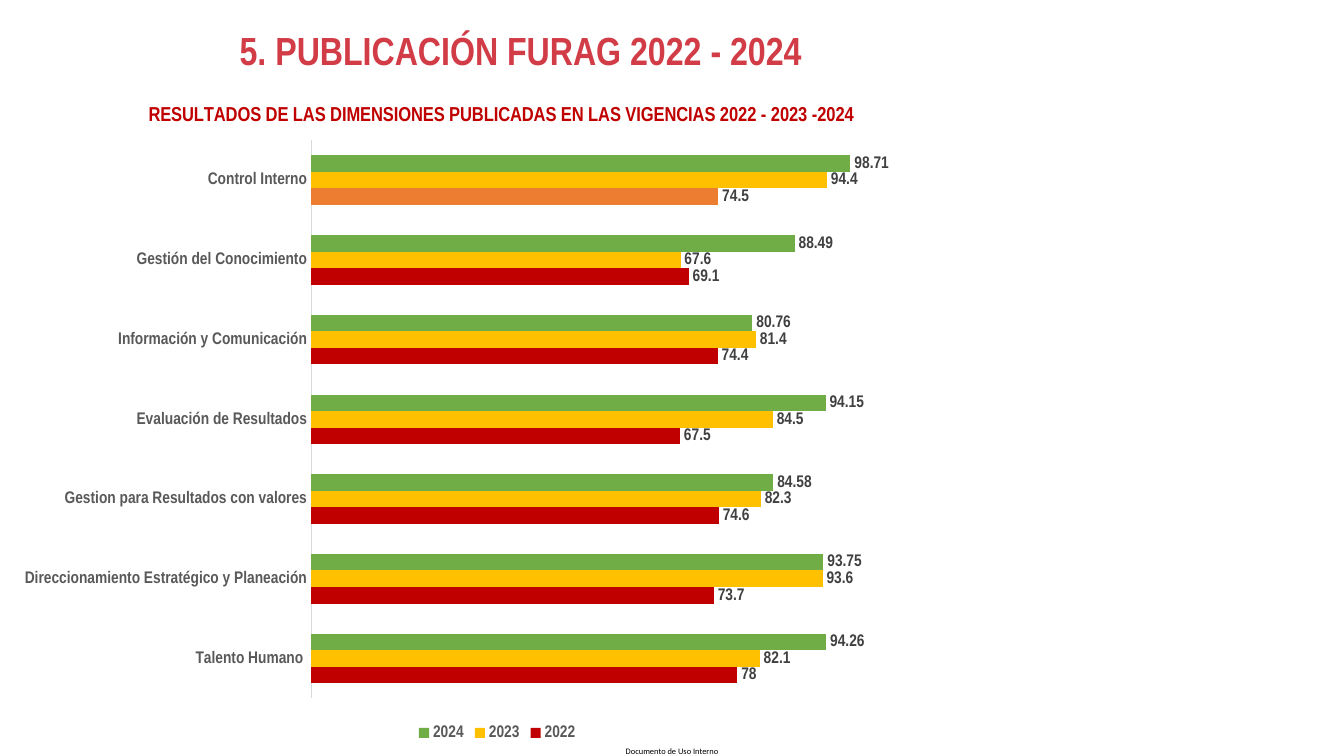
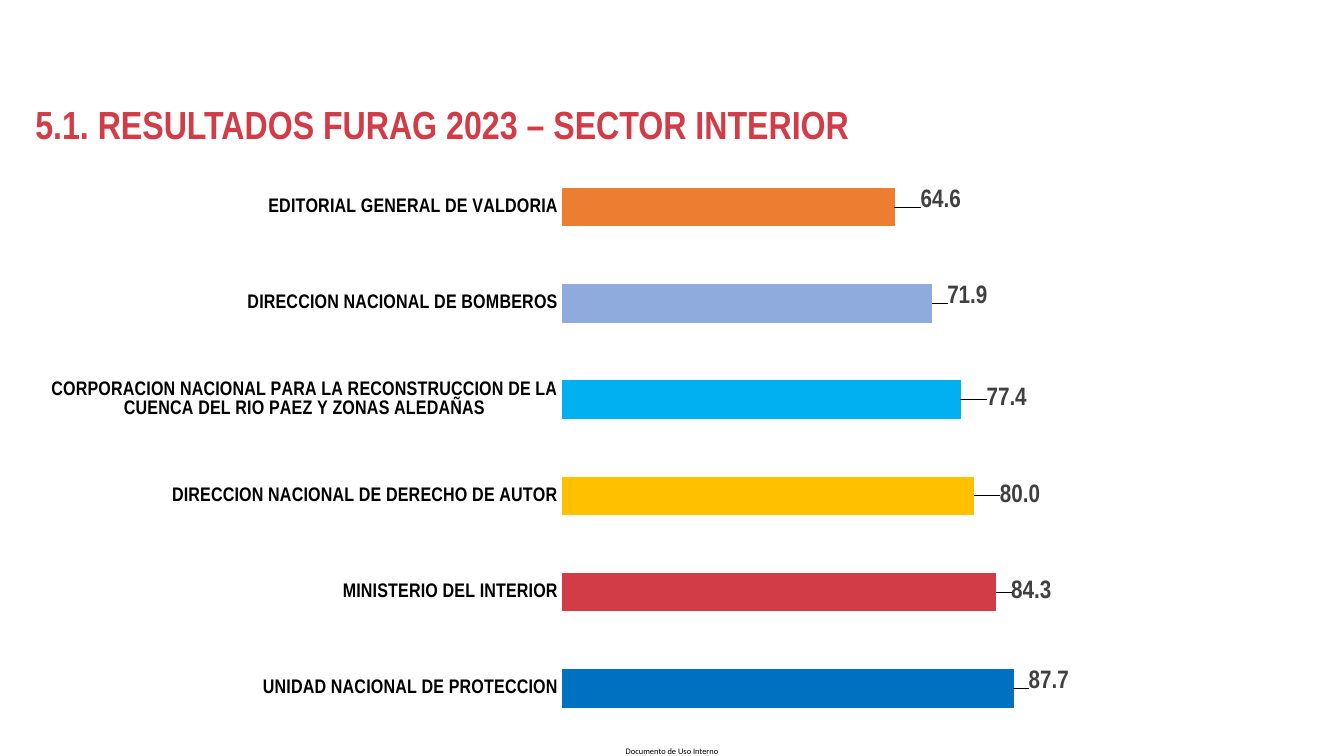
from lxml.etree import SubElement
from pptx import Presentation
from pptx.chart.data import CategoryChartData
from pptx.dml.color import RGBColor
from pptx.enum.chart import XL_CHART_TYPE, XL_LABEL_POSITION, XL_LEGEND_POSITION, XL_TICK_MARK
from pptx.enum.text import MSO_ANCHOR, MSO_AUTO_SIZE, PP_ALIGN
from pptx.oxml.ns import qn
from pptx.util import Cm, Pt

COLORS = {
    "title": "D13C47",
    "dark_red": "C00000",
    "amber": "FFC000",
    "green": "70AD47",
    "orange": "ED7D31",
    "blue": "0070C0",
    "sky": "00B0F0",
    "periwinkle": "8FAADC",
    "black": "000000",
    "axis_text": "595959",
    "label_text": "404040",
    "axis_line": "D9D9D9",
}
FONT = "Arial Narrow"


def set_font(font, size, color, name=FONT, bold=True):
    font.size = Pt(size)
    font.name = name
    font.bold = bold
    font.color.rgb = RGBColor.from_string(COLORS[color])


def set_layout(parent, index, **settings):
    for old_layout in parent.findall(qn("c:layout")):
        parent.remove(old_layout)
    layout = SubElement(parent, qn("c:layout"))
    manual = SubElement(layout, qn("c:manualLayout"))
    for tag, value in settings.items():
        SubElement(manual, qn(f"c:{tag}")).set("val", str(value))
    parent.insert(index, layout)


presentation = Presentation()
presentation.slide_width = Cm(33.87)
presentation.slide_height = Cm(19.05)

dimensions = CategoryChartData()
dimensions.categories = [
    "Talento Humano ",
    "Direccionamiento Estratégico y Planeación",
    "Gestion para Resultados con valores",
    "Evaluación de Resultados",
    "Información y Comunicación",
    "Gestión del Conocimiento",
    "Control Interno",
]
dimensions.add_series("2022", [78, 73.7, 74.6, 67.5, 74.4, 69.1, 74.5])
dimensions.add_series("2023", [82.1, 93.6, 82.3, 84.5, 81.4, 67.6, 94.4])
dimensions.add_series("2024", [94.26, 93.75, 84.58, 94.15, 80.76, 88.49, 98.71])

entities = CategoryChartData(number_format="0.0")
entities.categories = [
    "UNIDAD NACIONAL DE PROTECCION",
    "MINISTERIO DEL INTERIOR",
    "DIRECCION NACIONAL DE DERECHO DE AUTOR",
    "CORPORACION NACIONAL PARA LA RECONSTRUCCION DE LA CUENCA DEL RIO PAEZ Y ZONAS ALEDAÑAS",
    "DIRECCION NACIONAL DE BOMBEROS",
    "EDITORIAL GENERAL DE VALDORIA",
]
entities.add_series("Series 1", [87.7, 84.3, 80, 77.4, 71.9, 64.6])

pages = [
    {
        "title": "5. PUBLICACIÓN FURAG 2022 - 2024",
        "title_at": (5.79, 0.3),
        "data": dimensions,
        "chart_box": (0.2, 2.03, 24.66, 16.74),
        "plot": {"x": 0.31, "y": 0.09, "w": 0.67, "h": 0.84},
        "gap": 182,
        "maximum": 120,
        "category_font": (12, "axis_text"),
        "label_size": 12,
        "series_colors": ["dark_red", "amber", "green"],
    },
    {
        "title": "5.1. RESULTADOS FURAG 2023 – SECTOR INTERIOR",
        "title_at": (0.64, 2.16),
        "data": entities,
        "chart_box": (0.64, 3.38, 27.61, 15.65),
        "plot": {"x": 0.49, "y": 0.04, "w": 0.47, "h": 0.93},
        "gap": 150,
        "maximum": 100,
        "category_font": (14, "black"),
        "label_size": 18,
        "series_colors": ["orange"],
    },
]

charts = []
for page in pages:
    slide = presentation.slides.add_slide(presentation.slide_layouts[6])

    footer = slide.shapes.add_textbox(Cm(15.77), Cm(18.8), Cm(2.39), Cm(0.25))
    frame = footer.text_frame
    frame.margin_left = frame.margin_right = frame.margin_top = frame.margin_bottom = 0
    frame.auto_size = MSO_AUTO_SIZE.SHAPE_TO_FIT_TEXT
    frame.text = "Documento de Uso Interno"
    set_font(frame.paragraphs[0].runs[0].font, 6, "black", "Calibri", False)

    chart_box = [Cm(length) for length in page["chart_box"]]
    chart = slide.shapes.add_chart(XL_CHART_TYPE.BAR_CLUSTERED, *chart_box, page["data"]).chart
    set_font(chart.font, 12, "black")
    chart.has_title = False
    chart.has_legend = False

    category_axis = chart.category_axis
    category_axis.major_tick_mark = XL_TICK_MARK.NONE
    category_axis.has_major_gridlines = False
    set_font(category_axis.tick_labels.font, *page["category_font"])

    value_axis = chart.value_axis
    value_axis.minimum_scale = 0
    value_axis.maximum_scale = page["maximum"]
    value_axis.has_major_gridlines = False
    value_axis.visible = False

    plot = chart.plots[0]
    plot.gap_width = page["gap"]
    plot.vary_by_categories = False
    for series, color in zip(plot.series, page["series_colors"]):
        series.format.fill.solid()
        series.format.fill.fore_color.rgb = RGBColor.from_string(COLORS[color])
        labels = series.data_labels
        labels.show_value = True
        labels.position = XL_LABEL_POSITION.OUTSIDE_END
        set_font(labels.font, page["label_size"], "label_text")

    plot_area = chart._chartSpace.xpath("c:chart/c:plotArea")[0]
    set_layout(plot_area, 0, layoutTarget="inner", xMode="edge", yMode="edge", **page["plot"])
    charts.append(chart)

    left, top = page["title_at"]
    title = slide.shapes.add_textbox(Cm(left), Cm(top), Cm(23.11), Cm(1.7))
    frame = title.text_frame
    frame.word_wrap = True
    frame.vertical_anchor = MSO_ANCHOR.BOTTOM
    frame.text = page["title"]
    paragraph = frame.paragraphs[0]
    paragraph.alignment = PP_ALIGN.JUSTIFY
    paragraph.line_spacing = 0.9
    set_font(paragraph.runs[0].font, 28, "title")

dimension_chart, entity_chart = charts

dimension_chart.has_title = True
chart_title = dimension_chart.chart_title
chart_title.include_in_layout = False
chart_title.text_frame.text = "RESULTADOS DE LAS DIMENSIONES PUBLICADAS EN LAS VIGENCIAS 2022 - 2023 -2024"
set_font(chart_title.text_frame.paragraphs[0].runs[0].font, 14.4, "dark_red")
set_layout(chart_title._element, 1, xMode="edge", yMode="edge", x=0.14, y=0.03)

dimension_chart.has_legend = True
legend = dimension_chart.legend
legend.position = XL_LEGEND_POSITION.BOTTOM
legend.include_in_layout = False
set_font(legend.font, 12, "axis_text")

axis_line = dimension_chart.category_axis.format.line
axis_line.color.rgb = RGBColor.from_string(COLORS["axis_line"])
axis_line.width = Pt(0.75)
control_fill = dimension_chart.plots[0].series[0].points[6].format.fill
control_fill.solid()
control_fill.fore_color.rgb = RGBColor.from_string(COLORS["orange"])

entity_chart.category_axis.format.line.fill.background()
entity_series = entity_chart.plots[0].series[0]
entity_series.data_labels.number_format = "0.0"
entity_series.data_labels.number_format_is_linked = False

entity_points = [
    ("blue", 0.01, -0.01),
    ("title", 0.01, 0),
    ("amber", 0.02, 0),
    ("sky", 0.02, 0),
    ("periwinkle", 0.01, -0.01),
    ("orange", 0.02, -0.01),
]
for index, (color, shift_x, shift_y) in enumerate(entity_points):
    point = entity_series.points[index]
    point.format.fill.solid()
    point.format.fill.fore_color.rgb = RGBColor.from_string(COLORS[color])
    point.data_label.position = XL_LABEL_POSITION.OUTSIDE_END
    set_font(point.data_label.font, 18, "label_text")
    label = entity_series.data_labels._element.xpath(f"c:dLbl[c:idx/@val='{index}']")[0]
    set_layout(label, 1, x=shift_x, y=shift_y)
    number_format = SubElement(label, qn("c:numFmt"))
    number_format.set("formatCode", "0.0")
    number_format.set("sourceLinked", "0")
    label.insert(2, number_format)

presentation.save("out.pptx")
